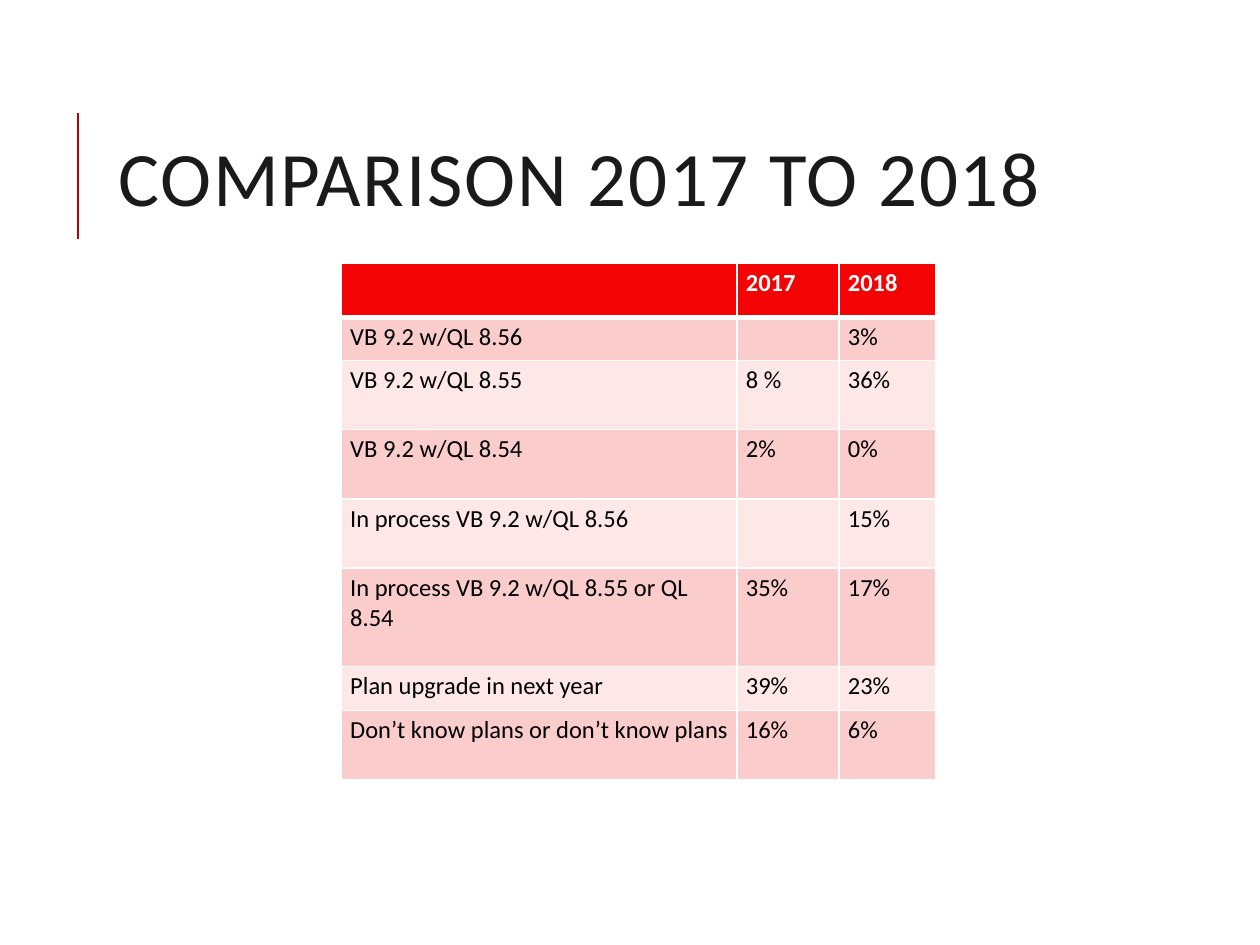
from pptx import Presentation
from pptx.dml.color import RGBColor
from pptx.enum.shapes import MSO_CONNECTOR
from pptx.enum.text import MSO_ANCHOR, MSO_AUTO_SIZE, PP_ALIGN
from pptx.oxml.ns import qn
from pptx.util import Inches, Pt
from lxml.etree import SubElement

TITLE = "COMPARISON 2017 TO 2018"
ROWS = [
    (0.43, "", "2017", "2018"),
    (0.34, "VB 9.2 w/QL 8.56", "", "3%"),
    (0.55, "VB 9.2 w/QL 8.55", "8 %", "36%"),
    (0.55, "VB 9.2 w/QL 8.54", "2%", "0%"),
    (0.55, "In process VB 9.2 w/QL 8.56", "", "15%"),
    (0.78, "In process VB 9.2 w/QL 8.55 or QL 8.54", "35%", "17%"),
    (0.35, "Plan upgrade in next year", "39%", "23%"),
    (0.55, "Don’t know plans or don’t know plans", "16%", "6%"),
]
COL_WIDTHS = (3.14, 0.81, 0.77)
HEADER, BANDS = "F30303", ("FDE7E7", "FACCCC")


def color(value):
    return RGBColor.from_string(value)


def style(run, size, ink, bold=False):
    font = run.font
    font.name, font.size, font.bold = "Calibri", Pt(size), bold
    font.color.rgb = color(ink)


def add_borders(cell, widths):
    tc_pr = cell._tc.get_or_add_tcPr()
    for i, (side, width) in enumerate(widths.items()):
        ln = tc_pr.makeelement(qn(f"a:ln{side}"), {"w": str(Pt(width))})
        fill = SubElement(ln, qn("a:solidFill"))
        SubElement(fill, qn("a:srgbClr"), val="FFFFFF")
        tc_pr.insert(i, ln)


def add_title(s):
    title = s.shapes.title
    title.left, title.top = Inches(0.84), Inches(0.64)
    title.width, title.height = Inches(7.97), Inches(1.64)
    tf = title.text_frame
    tf.text = TITLE
    tf.word_wrap, tf.auto_size = True, MSO_AUTO_SIZE.NONE
    tf.vertical_anchor = MSO_ANCHOR.MIDDLE
    p = tf.paragraphs[0]
    p.alignment, p.line_spacing = PP_ALIGN.LEFT, 0.8
    style(p.runs[0], 44, "1A1A1A")
    p.runs[0].font._element.set("spc", "100")


def add_rule(s):
    x = Inches(0.62)
    rule = s.shapes.add_connector(MSO_CONNECTOR.STRAIGHT, x, Inches(1.9), x, Inches(0.9))
    rule.line.color.rgb = color("B40404")
    rule.line.width = Pt(1.5)
    SubElement(rule._element.spPr, qn("a:effectLst"))


def add_comparison(s):
    width, height = sum(COL_WIDTHS), sum(row[0] for row in ROWS)
    table = s.shapes.add_table(len(ROWS), len(COL_WIDTHS), Inches(2.71), Inches(2.09),
                               Inches(width), Inches(height)).table
    for column, col_width in zip(table.columns, COL_WIDTHS):
        column.width = Inches(col_width)
    for i, (row_height, *texts) in enumerate(ROWS):
        table.rows[i].height = Inches(row_height)
        for j, text in enumerate(texts):
            cell = table.cell(i, j)
            cell.margin_left = cell.margin_right = Inches(0.07)
            cell.margin_top = cell.margin_bottom = Inches(0.04)
            cell.fill.solid()
            cell.fill.fore_color.rgb = color(BANDS[i % 2] if i else HEADER)
            add_borders(cell, {"L": 1, "R": 1, "T": 3 if i == 1 else 1, "B": 1 if i else 3})
            p = cell.text_frame.paragraphs[0]
            if text:
                p.text = text
                style(p.runs[0], 14, "000000" if i else "FFFFFF", bold=i == 0)
            else:
                SubElement(p._p, qn("a:endParaRPr"), sz="1400")


def main():
    """Build the slide comparing 2017 and 2018 upgrade plans."""
    prs = Presentation()
    prs.slide_width, prs.slide_height = Inches(10), Inches(7.5)
    s = prs.slides.add_slide(prs.slide_layouts[5])
    add_rule(s)
    add_title(s)
    add_comparison(s)
    prs.save("out.pptx")


if __name__ == "__main__":
    main()
